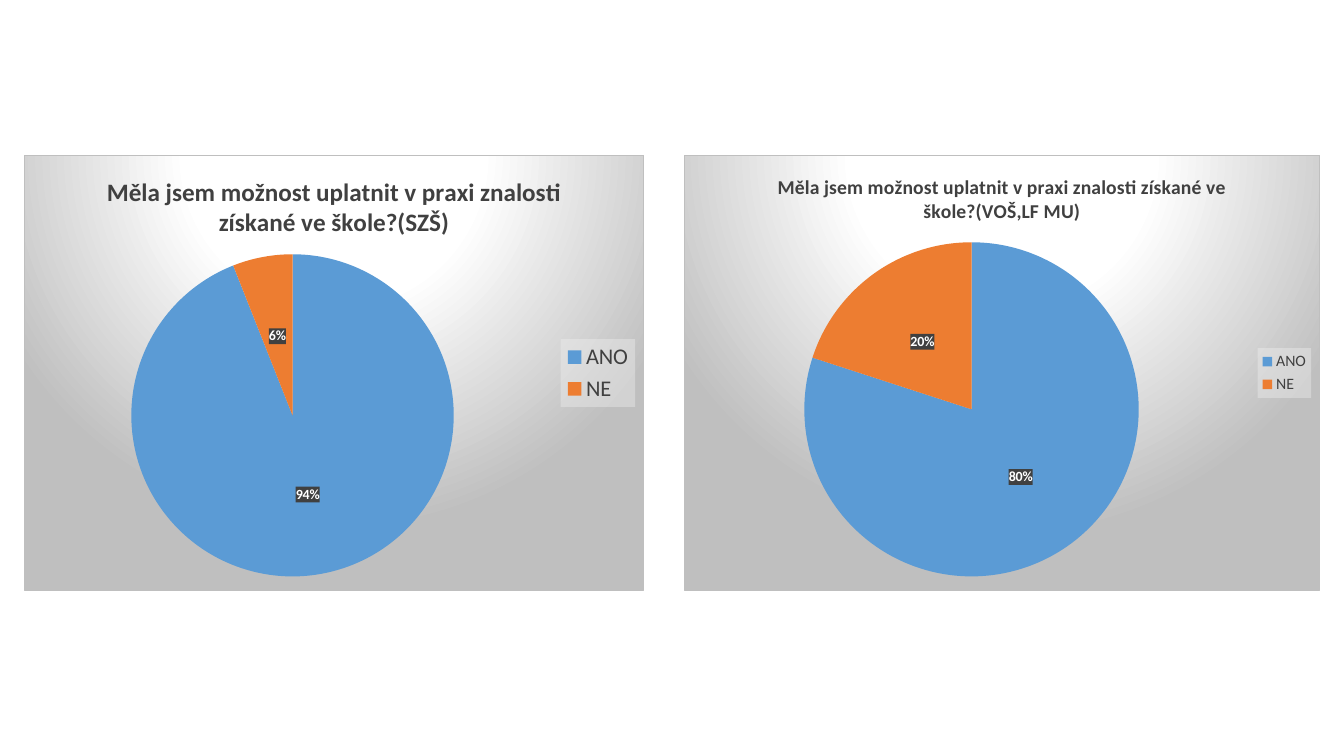
from lxml.etree import fromstring
from pptx import Presentation
from pptx.chart.data import CategoryChartData
from pptx.dml.color import RGBColor
from pptx.enum.chart import XL_CHART_TYPE, XL_LABEL_POSITION, XL_LEGEND_POSITION
from pptx.util import Emu, Pt

PX = 914400 / 100.8
FONT = "Calibri"
COLORS = {"ANO": "5B9BD5", "NE": "ED7D31", "text": "404040", "white": "FFFFFF",
          "grey": "BFBFBF", "legend": "F2F2F2", "black": "000000"}
NS = ('xmlns:c="http://schemas.openxmlformats.org/drawingml/2006/chart" '
      'xmlns:a="http://schemas.openxmlformats.org/drawingml/2006/main"')


def px(n):
    return Emu(round(n * PX))


class PieSlide:
    """Holds the style and the current slide, and draws survey pies on it."""

    def __init__(self, prs):
        self.slide = prs.slides.add_slide(prs.slide_layouts[6])

    def font(self, font, size, color, bold=False):
        for name, value in {"name": FONT, "size": Pt(size), "bold": bold}.items():
            setattr(font, name, value)
        font.color.rgb = RGBColor.from_string(COLORS[color])

    def solid(self, color, alpha):
        return fromstring(
            f'<c:spPr {NS}><a:solidFill><a:srgbClr val="{COLORS[color]}">'
            f'<a:alpha val="{alpha * 1000}"/></a:srgbClr></a:solidFill>'
            '<a:ln><a:noFill/></a:ln></c:spPr>')

    def background(self, chart):
        stops = "".join(
            f'<a:gs pos="{pos * 1000}"><a:srgbClr val="{COLORS[color]}"/></a:gs>'
            for pos, color in ((0, "white"), (39, "white"), (100, "grey")))
        sp_pr = fromstring(
            f'<c:spPr {NS}><a:gradFill><a:gsLst>{stops}</a:gsLst><a:path path="circle">'
            '<a:fillToRect l="50000" t="-80000" r="50000" b="180000"/></a:path></a:gradFill>'
            f'<a:ln w="9525"><a:solidFill><a:srgbClr val="{COLORS["grey"]}"/>'
            '</a:solidFill></a:ln></c:spPr>')
        chart.element.chart.addnext(sp_pr)

    def plot_layout(self, chart, frame, circle):
        left, top, width, height = frame
        x, y, size = circle
        parts = {"x": (x - left) / width, "y": (y - top) / height,
                 "w": size / width, "h": size / height}
        values = "".join(f'<c:{k} val="{v:.4f}"/>' for k, v in parts.items())
        area = chart.element.chart.plotArea
        for old in area.findall("{*}layout"):
            area.remove(old)
        area.insert(0, fromstring(
            f'<c:layout {NS}><c:manualLayout><c:layoutTarget val="inner"/>'
            f'<c:xMode val="edge"/><c:yMode val="edge"/>{values}'
            '</c:manualLayout></c:layout>'))

    def labels(self, plot):
        plot.has_data_labels = True
        labels = plot.data_labels
        for name, value in {"number_format": "0%", "number_format_is_linked": False,
                            "show_percentage": True, "show_value": False,
                            "position": XL_LABEL_POSITION.CENTER}.items():
            setattr(labels, name, value)
        self.font(labels.font, 10, "white", True)
        labels._element.find("{*}numFmt").addnext(self.solid("text", 90))

    def legend(self, chart, size):
        chart.has_legend = True
        legend = chart.legend
        legend.position = XL_LEGEND_POSITION.RIGHT
        legend.include_in_layout = False
        self.font(legend.font, size, "text")
        legend._element.find("{*}overlay").addnext(self.solid("legend", 39))

    def pie(self, frame, circle, title, title_size, legend_size, values):
        data = CategoryChartData()
        data.categories = ["ANO", "NE"]
        data.add_series("Series 1", values)
        chart = self.slide.shapes.add_chart(
            XL_CHART_TYPE.PIE, *map(px, frame), data).chart
        self.font(chart.font, 10, "black")
        self.background(chart)
        self.plot_layout(chart, frame, circle)
        chart.has_title = True
        chart.chart_title.include_in_layout = False
        p = chart.chart_title.text_frame.paragraphs[0]
        r = p.add_run()
        r.text = title
        self.font(r.font, title_size, "text", True)
        self.legend(chart, legend_size)
        plot = chart.plots[0]
        plot.vary_by_categories = True
        for i, name in enumerate(plot.categories):
            point = plot.series[0].points[i].format
            point.fill.solid()
            point.fill.fore_color.rgb = RGBColor.from_string(COLORS[name])
            point.line.fill.background()
        self.labels(plot)


def main():
    prs = Presentation()
    prs.slide_width, prs.slide_height = px(1344), px(756)
    s = PieSlide(prs)
    question = "Měla jsem možnost uplatnit v praxi znalosti získané ve škole?"
    s.pie((684, 155, 636, 436), (804, 242, 335), question + "(VOŠ,LF MU)", 14, 11.3, (80, 20))
    s.pie((24, 155, 620, 436), (131, 254, 323), question + "(SZŠ)", 18, 16, (94, 6))
    prs.save("out.pptx")


if __name__ == "__main__":
    main()
